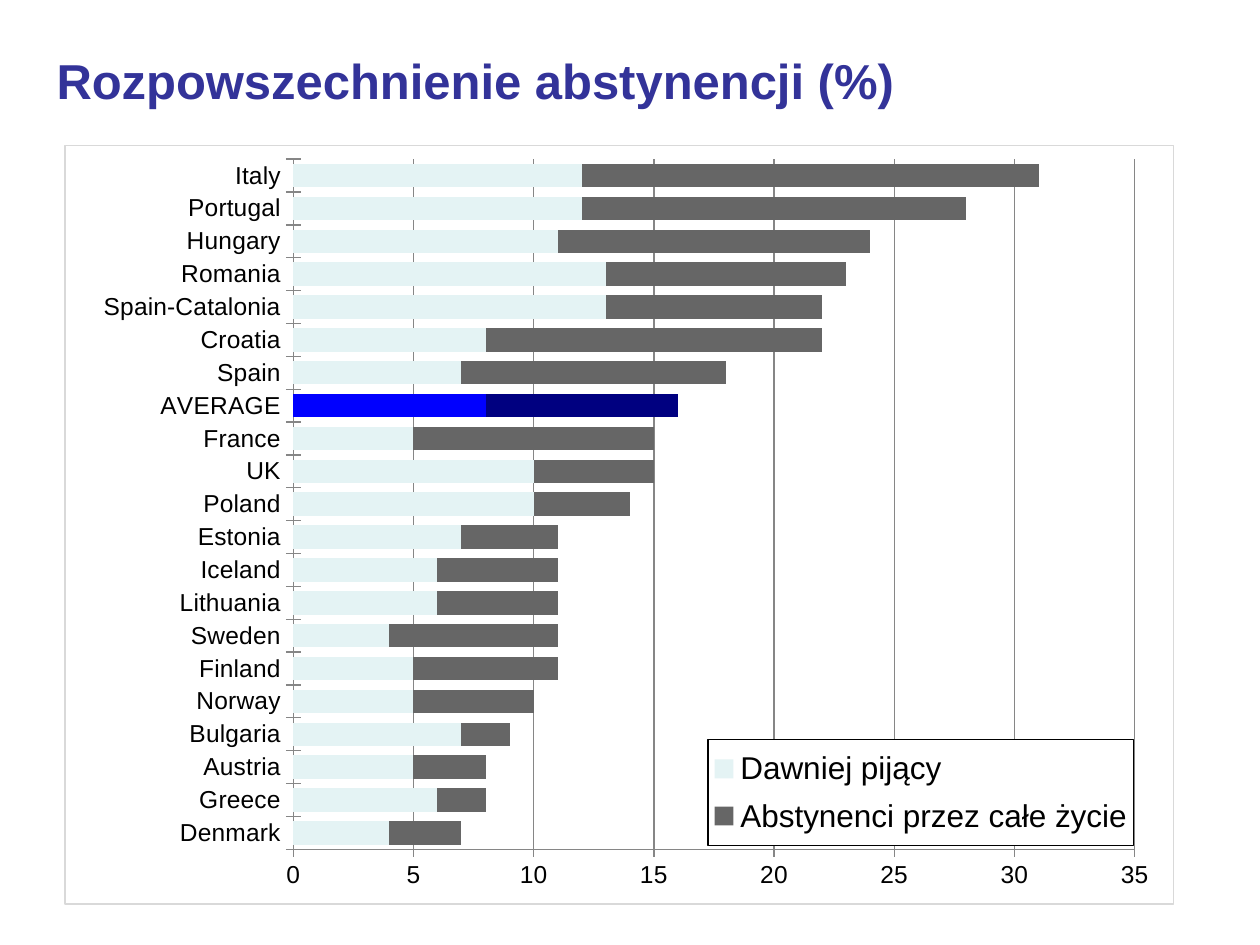
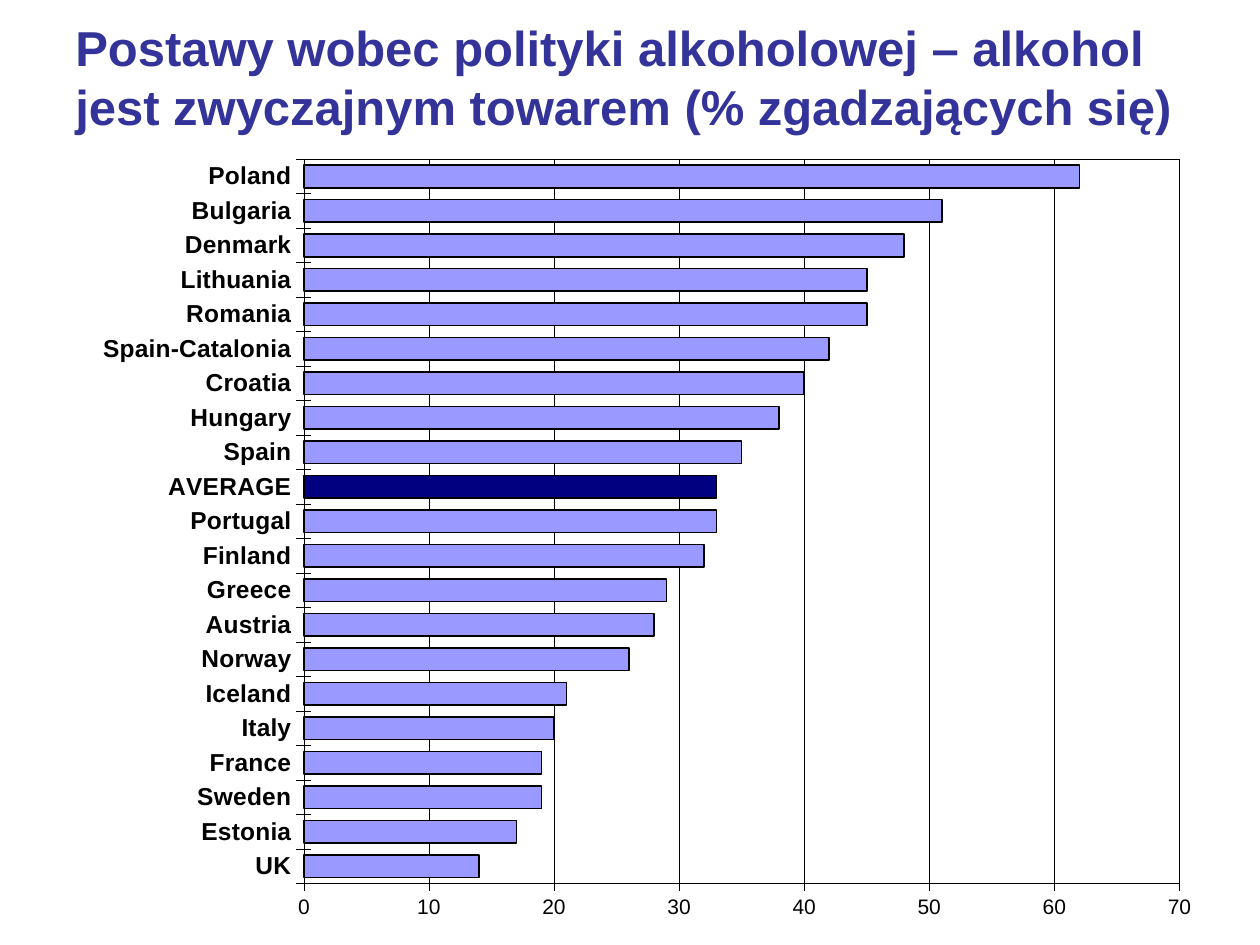
from lxml import etree
from pptx import Presentation
from pptx.chart.data import CategoryChartData
from pptx.dml.color import RGBColor
from pptx.enum.chart import XL_CHART_TYPE, XL_LEGEND_POSITION, XL_TICK_MARK
from pptx.enum.text import MSO_ANCHOR
from pptx.oxml import parse_xml
from pptx.oxml.ns import nsdecls, qn
from pptx.util import Inches, Pt

STACKED = XL_CHART_TYPE.BAR_STACKED
CLUSTERED = XL_CHART_TYPE.BAR_CLUSTERED
RIGHT = XL_LEGEND_POSITION.RIGHT
CROSS = XL_TICK_MARK.CROSS
MIDDLE = MSO_ANCHOR.MIDDLE

FONT = "Arial"
INDIGO = RGBColor(0x33, 0x33, 0x99)
BLACK = RGBColor(0, 0, 0)
WHITE = RGBColor(255, 255, 255)
GREY = RGBColor(0x86, 0x86, 0x86)
PALE = RGBColor(0xE4, 0xF3, 0xF4)
DARK = RGBColor(0x66, 0x66, 0x66)
SILVER = RGBColor(0xD9, 0xD9, 0xD9)
LILAC = RGBColor(0x99, 0x99, 0xFF)
BLUE = RGBColor(0, 0, 255)
NAVY = RGBColor(0, 0, 0x80)

AVERAGE = "AVERAGE"

# Rows run from the bottom bar to the top bar
ABSTAIN = [
    ("Denmark", 4, 3), ("Greece", 6, 2), ("Austria", 5, 3),
    ("Bulgaria", 7, 2), ("Norway", 5, 5), ("Finland", 5, 6),
    ("Sweden", 4, 7), ("Lithuania", 6, 5), ("Iceland", 6, 5),
    ("Estonia", 7, 4), ("Poland", 10, 4), ("UK", 10, 5),
    ("France", 5, 10), (AVERAGE, 8, 8), ("Spain", 7, 11),
    ("Croatia", 8, 14), ("Spain-Catalonia", 13, 9), ("Romania", 13, 10),
    ("Hungary", 11, 13), ("Portugal", 12, 16), ("Italy", 12, 19),
]
AGREE = [
    ("UK", 14), ("Estonia", 17), ("Sweden", 19), ("France", 19),
    ("Italy", 20), ("Iceland", 21), ("Norway", 26), ("Austria", 28),
    ("Greece", 29), ("Finland", 32), ("Portugal", 33), (AVERAGE, 33),
    ("Spain", 35), ("Hungary", 38), ("Croatia", 40),
    ("Spain-Catalonia", 42), ("Romania", 45), ("Lithuania", 45),
    ("Denmark", 48), ("Bulgaria", 51), ("Poland", 62),
]


def layout(box, inner=False):
    """Manual chart layout; box holds fractions of the chart area."""
    node = etree.Element(qn("c:layout"))
    manual = etree.SubElement(node, qn("c:manualLayout"))
    parts = [("layoutTarget", "inner")] if inner else []
    parts += [("xMode", "edge"), ("yMode", "edge")]
    parts += zip("xywh", box)
    for tag, val in parts:
        etree.SubElement(manual, qn("c:" + tag), val=str(val))
    return node


def frame(color, width, fill=None):
    """Shape properties for a chart part: an outline and maybe a fill."""
    inside = (f'<a:solidFill><a:srgbClr val="{fill}"/></a:solidFill>'
              if fill is not None else "<a:noFill/>")
    return parse_xml(
        f'<c:spPr {nsdecls("c", "a")}>{inside}<a:ln w="{Pt(width)}">'
        f'<a:solidFill><a:srgbClr val="{color}"/></a:solidFill>'
        f'</a:ln></c:spPr>')


class Deck:
    def __init__(self):
        self.prs = Presentation()
        self.prs.slide_width = Inches(10)
        self.prs.slide_height = Inches(7.5)
        self.slide = None

    def page(self):
        self.slide = self.prs.slides.add_slide(self.prs.slide_layouts[6])

    def title(self, text, *box):
        area = self.slide.shapes.add_textbox(*map(Inches, box)).text_frame
        area.word_wrap = True
        area.vertical_anchor = MIDDLE
        para = area.paragraphs[0]
        para.text = text
        self.font(para.font, 28, INDIGO, True)

    def font(self, font, size, color=BLACK, bold=False):
        font.name = FONT
        font.size = Pt(size)
        font.bold = bold
        font.color.rgb = color

    def line(self, line, color, width):
        line.color.rgb = color
        line.width = Pt(width)

    def bars(self, kind, rows, series, box, plot, gap, edge=None):
        """Series holds (name, colour, colour of the average)."""
        data = CategoryChartData(number_format="0")
        names, *columns = zip(*rows)
        data.categories = names
        for (name, *_), vals in zip(series, columns):
            data.add_series(name, vals)
        chart = self.slide.shapes.add_chart(
            kind, *map(Inches, box), data).chart
        self.font(chart.font, 10)
        chart.has_title = False
        chart.has_legend = False
        group = chart.plots[0]
        group.vary_by_categories = False
        group.gap_width = gap
        group.overlap = 100 if kind == STACKED else 0
        for item, (_, color, mark) in zip(group.series, series):
            item.invert_if_negative = False
            point = item.points[names.index(AVERAGE)]
            for part, fill in ((item, color), (point, mark)):
                part.format.fill.solid()
                part.format.fill.fore_color.rgb = fill
                if edge is not None:
                    self.line(part.format.line, edge, 0.93)
        area = chart.element.find(".//" + qn("c:plotArea"))
        for old in area.findall(qn("c:layout")):
            area.remove(old)
        area.insert(0, layout(plot, inner=True))
        return chart

    def axes(self, chart, top, step, form, color, width, size, bold=False):
        value, names = chart.value_axis, chart.category_axis
        value.minimum_scale, value.maximum_scale = 0, top
        value.major_unit = step
        value.has_major_gridlines = True
        value.tick_labels.number_format = form
        value.tick_labels.number_format_is_linked = False
        self.line(value.major_gridlines.format.line, color, width)
        self.font(value.tick_labels.font, size)
        self.font(names.tick_labels.font, 14, bold=bold)
        for axis in (value, names):
            axis.major_tick_mark = CROSS
            self.line(axis.format.line, color, width)

    def legend(self, chart, *box):
        chart.has_legend = True
        chart.legend.position = RIGHT
        chart.legend.include_in_layout = False
        self.font(chart.legend.font, 18)
        node = chart.element.find(".//" + qn("c:legend"))
        for old in node.findall(qn("c:layout")):
            node.remove(old)
        over = node.find(qn("c:overlay"))
        over.addprevious(layout(box))
        over.addnext(frame(BLACK, 0.75, WHITE))


def main():
    deck = Deck()

    # Abstinence: former drinkers and lifetime abstainers
    deck.page()
    deck.title("Rozpowszechnienie abstynencji (%)", 0.35, 0.2, 9.45, 0.87)
    chart = deck.bars(
        STACKED, ABSTAIN,
        [("Dawniej pijący", PALE, BLUE),
         ("Abstynenci przez całe życie", DARK, NAVY)],
        (0.51, 1.15, 8.81, 6.03), (0.206, 0.018, 0.759, 0.91), 40)
    deck.axes(chart, 35, 5, "#,##0", GREY, 0.75, 14)
    deck.legend(chart, 0.58, 0.783, 0.384, 0.14)
    chart.element.find(qn("c:chart")).addnext(frame(SILVER, 0.75))

    # Attitudes: share that sees alcohol as an ordinary product
    deck.page()
    deck.title("Postawy wobec polityki alkoholowej – alkohol jest "
               "zwyczajnym towarem (% zgadzających się)",
               0.5, 0.21, 9.3, 0.79)
    chart = deck.bars(
        CLUSTERED, AGREE, [("Series 1", LILAC, NAVY)],
        (0.63, 1.15, 8.91, 6.29), (0.2, 0.018, 0.78, 0.914), 52, BLACK)
    deck.axes(chart, 70, 10, "General", BLACK, 0.23, 12, True)
    area = chart.element.find(".//" + qn("c:plotArea"))
    area.append(frame(BLACK, 0.23))

    deck.prs.save("out.pptx")


if __name__ == "__main__":
    main()
